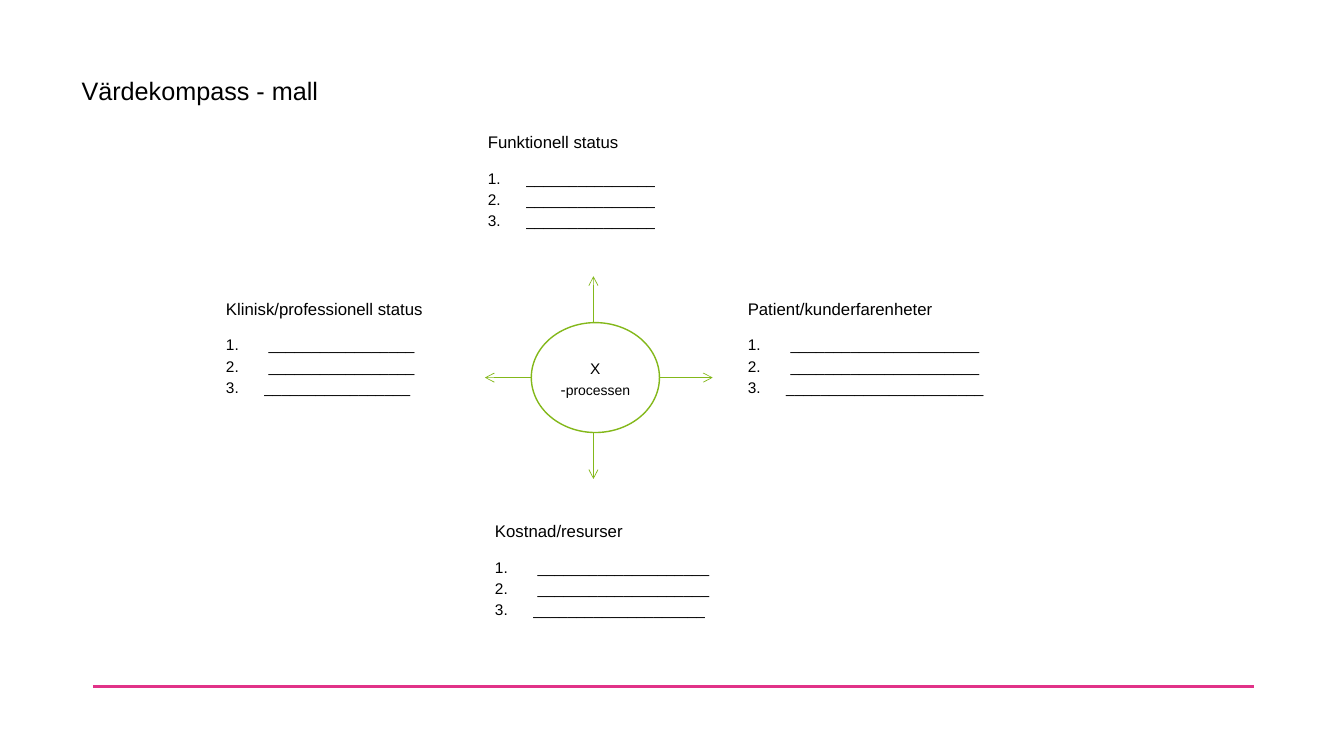
import pptx
import pptx.util
import pptx.dml.color
import pptx.enum.shapes
import pptx.enum.text
import pptx.oxml
import pptx.oxml.ns
from dataclasses import dataclass

Cm = pptx.util.Cm
Pt = pptx.util.Pt
Shape = pptx.enum.shapes.MSO_SHAPE
Anchor = pptx.enum.text.MSO_ANCHOR
Align = pptx.enum.text.PP_ALIGN


@dataclass(frozen=True)
class Theme:
    face: str = "Arial"
    ink: str = "000000"
    paper: str = "FFFFFF"
    green: str = "83B81A"
    pink: str = "E13288"
    title: int = 18
    head: int = 12
    text: int = 11
    small: int = 10


theme = Theme()


def tint(code):
    return pptx.dml.color.RGBColor.from_string(code)


def paint(shape, code):
    shape.fill.solid()
    shape.fill.fore_color.rgb = tint(code)


def add(parent, tag, **attrs):
    node = pptx.oxml.ns.qn(tag)
    child = parent.makeelement(node, attrs)
    parent.append(child)
    return child


def style(para, size, after=0, spread=1.15, align=Align.LEFT):
    para.alignment = align
    para.line_spacing = spread
    para.space_before = Pt(0)
    para.space_after = Pt(after)
    font = para.font
    font.name = theme.face
    font.size = Pt(size)
    font.bold = False
    font.color.rgb = tint(theme.ink)


def place(shape, box):
    shape.left, shape.top, shape.width, shape.height = map(Cm, box)
    frame = shape.text_frame
    frame.word_wrap = True
    frame.auto_size = pptx.enum.text.MSO_AUTO_SIZE.NONE
    frame.vertical_anchor = Anchor.TOP
    return frame


def add_title(slide, box, text):
    frame = place(slide.shapes.title, box)
    frame.text = text
    style(frame.paragraphs[0], theme.title, spread=1.0)


def add_list(holder, box, head, rows):
    frame = place(holder, box)
    paint(holder, theme.paper)
    frame.text = head
    first = frame.paragraphs[0]
    props = first._p.get_or_add_pPr()
    props.set("marL", "0")
    props.set("indent", "0")
    add(props, "a:buNone")
    style(first, theme.head, after=10)
    for row in rows:
        para = frame.add_paragraph()
        para.text = row
        props = para._p.get_or_add_pPr()
        props.set("marL", str(Cm(0.97)))
        props.set("indent", str(-Cm(0.97)))
        add(props, "a:buFont", typeface=theme.face)
        add(props, "a:buAutoNum", type="arabicPeriod")
        style(para, theme.text)


def add_line(slide, start, end, code, width, arrow=False):
    kind = pptx.enum.shapes.MSO_CONNECTOR.STRAIGHT
    line = slide.shapes.add_connector(kind, *map(Cm, (*start, *end)))
    line.line.color.rgb = tint(code)
    line.line.width = Pt(width)
    if arrow:
        add(line.line._get_or_add_ln(), "a:tailEnd", type="arrow")
    add(line._element.spPr, "a:effectLst")


def add_hub(slide, box):
    left, top, width, height = box
    hub = slide.shapes.add_shape(Shape.OVAL, *map(Cm, box))
    hub.shadow.inherit = False
    paint(hub, theme.paper)
    hub.line.color.rgb = tint(theme.green)
    hub.line.width = Pt(1)
    frame = hub.text_frame
    frame.word_wrap = True
    frame.vertical_anchor = Anchor.MIDDLE
    para = frame.paragraphs[0]
    style(para, theme.text, after=10, align=Align.CENTER)
    for text, size in (("X -", theme.text), ("processen", theme.small)):
        run = para.add_run()
        run.text = text
        run.font.size = Pt(size)

    mid_x = left + width / 2 - 0.05
    mid_y = top + height / 2
    right, base = left + width, top + height
    reach = 1.17
    for start, end in (
        ((mid_x, base), (mid_x, base + reach)),
        ((left, mid_y), (left - reach, mid_y)),
        ((mid_x, top), (mid_x, top - reach)),
        ((right, mid_y), (right + 1.34, mid_y)),
    ):
        add_line(slide, start, end, theme.green, 0.5, arrow=True)


def add_compass(deck):
    slide = deck.slides.add_slide(deck.slide_layouts[4])
    add_title(slide, (1.8, 1.78, 7.8, 1.02), "Värdekompass - mall")
    parts = (
        ("Funktionell status", (12.04, 3.12, 5.92, 3.33),
         ["_" * 15] * 3),
        ("Patient/kunderfarenheter", (18.59, 7.32, 7.24, 3.33),
         [" " + "_" * 22] * 2 + ["_" * 23]),
        ("Klinisk/professionell status", (5.44, 7.32, 6.78, 4.39),
         [" " + "_" * 17] * 2 + ["_" * 17]),
        ("Kostnad/resurser", (12.22, 12.93, 5.92, 3.33),
         [" " + "_" * 20] * 2 + ["_" * 20]),
    )
    holders = list(slide.placeholders)[1:]
    for holder, (head, box, rows) in zip(holders, parts):
        add_list(holder, box, head, rows)
    add_hub(slide, (13.39, 8.13, 3.23, 2.77))
    add_line(slide, (2.34, 17.3), (31.6, 17.3), theme.pink, 1.5)


def main():
    deck = pptx.Presentation()
    deck.slide_width = Cm(33.87)
    deck.slide_height = Cm(19.05)
    add_compass(deck)
    deck.save("out.pptx")


if __name__ == "__main__":
    main()
